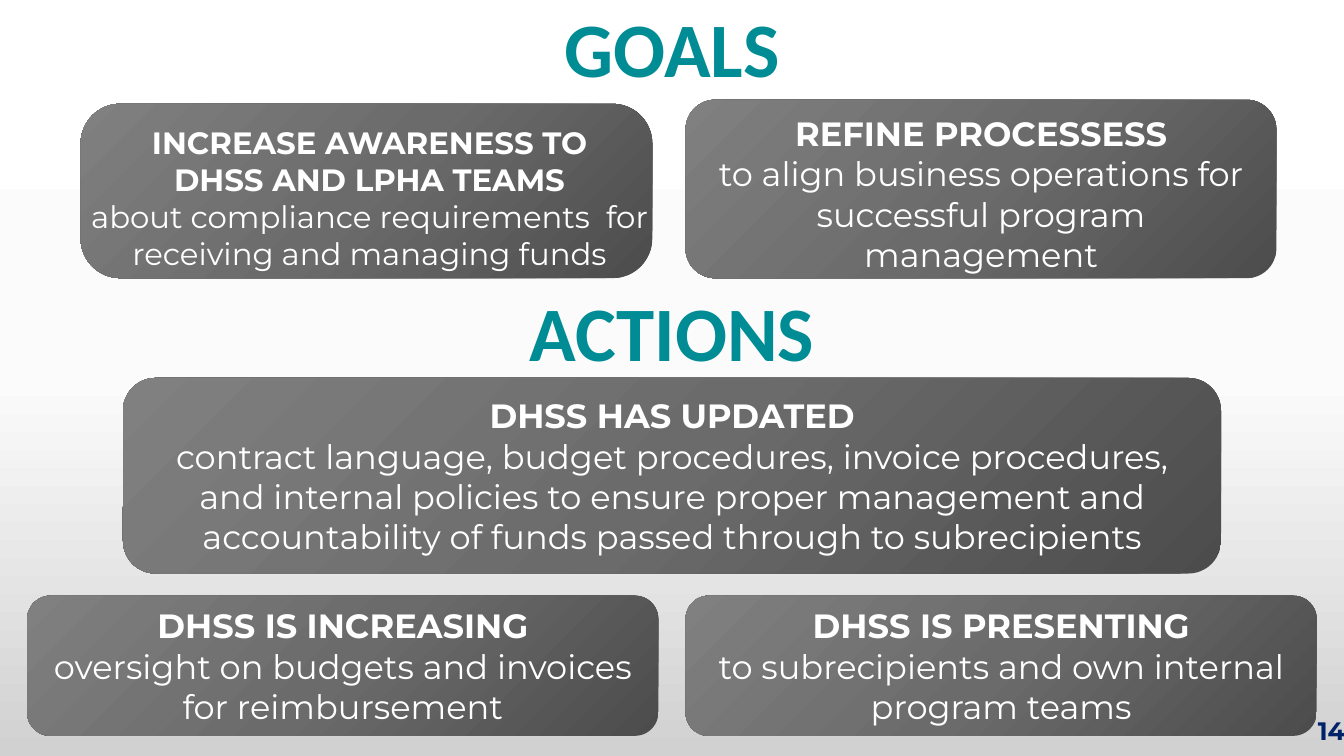
from copy import deepcopy
from dataclasses import dataclass

from pptx import Presentation
from pptx.dml.color import RGBColor
from pptx.dml.fill import FillFormat
from pptx.enum.shapes import MSO_SHAPE
from pptx.enum.text import MSO_ANCHOR, MSO_AUTO_SIZE, PP_ALIGN
from pptx.oxml.ns import qn
from pptx.oxml.xmlchemy import BaseOxmlElement
from pptx.shapes.autoshape import Shape
from pptx.slide import Slide
from pptx.text.text import TextFrame
from pptx.util import Inches, Pt

TEAL, NAVY, WHITE = "008C95", "012169", "FFFFFF"
CARD_COLORS = ["4C4C4C", "6B6B6B", "808080"]
PAGE_COLORS = ["FFFFFF", "FBFBFB", "D1D1D1"]
SLIDE_WIDTH, HEADING_HEIGHT = 13.33, 0.97


@dataclass
class Box:
    left: float
    top: float
    width: float
    height: float

    def lengths(self) -> list[int]:
        return [Inches(v) for v in (self.left, self.top, self.width, self.height)]


@dataclass
class Card:
    box: Box
    heading: list[str]
    body: str
    size: int = 24
    corner: float = 0.1667
    text_box: Box | None = None  # set when the text sits in its own box


CARDS = [
    Card(Box(0.8, 1.03, 5.67, 1.73),
         ["INCREASE AWARENESS TO", "DHSS AND LPHA TEAMS"],
         "about compliance requirements  for receiving and managing funds",
         size=22, corner=0.228, text_box=Box(0.8, 1.18, 5.73, 1.58)),
    Card(Box(6.8, 0.99, 5.86, 1.77), ["REFINE PROCESSESS"],
         "to align business operations for successful program management",
         text_box=Box(6.8, 1.07, 5.86, 1.72)),
    Card(Box(1.22, 3.75, 10.89, 1.94), ["DHSS HAS UPDATED"],
         "contract language, budget procedures, invoice procedures, and internal "
         "policies to ensure proper management and accountability of funds passed "
         "through to subrecipients"),
    Card(Box(0.27, 5.91, 6.26, 1.39), ["DHSS IS INCREASING"],
         "oversight on budgets and invoices for reimbursement"),
    Card(Box(6.8, 5.91, 6.26, 1.39), ["DHSS IS PRESENTING"],
         "to subrecipients and own internal program teams"),
]


def rgb(color: str) -> RGBColor:
    return RGBColor.from_string(color)


def set_gradient(fill: FillFormat, element: BaseOxmlElement,
                 colors: list[str], angle: float) -> None:
    """Spread colors evenly; element is the XML holding the fill."""
    fill.gradient()
    fill.gradient_angle = angle
    stops = element.find(".//" + qn("a:gsLst"))
    while len(stops) < len(colors):
        stops.append(deepcopy(stops[0]))
    for i, (stop, color) in enumerate(zip(fill.gradient_stops, colors)):
        stop.position = i / (len(colors) - 1)
        stop.color.rgb = rgb(color)


def write_lines(tf: TextFrame, lines: list[str], size: int, color: str,
                font: str = "Montserrat", bold_lines: int = 1) -> None:
    tf.word_wrap = True
    for i, line in enumerate(lines):
        p = tf.paragraphs[0] if i == 0 else tf.add_paragraph()
        p.text = line
        p.alignment = PP_ALIGN.CENTER
        p.font.name = font
        p.font.size = Pt(size)
        p.font.bold = i < bold_lines
        p.font.color.rgb = rgb(color)


def add_text_box(slide: Slide, box: Box) -> Shape:
    sp = slide.shapes.add_textbox(*box.lengths())
    sp.text_frame.auto_size = MSO_AUTO_SIZE.SHAPE_TO_FIT_TEXT
    return sp


def add_card(slide: Slide, card: Card) -> None:
    sp = slide.shapes.add_shape(MSO_SHAPE.ROUNDED_RECTANGLE, *card.box.lengths())
    sp.adjustments[0] = card.corner
    sp.shadow.inherit = False
    sp.line.fill.background()
    set_gradient(sp.fill, sp.element, CARD_COLORS, 135)
    if card.text_box:
        sp = add_text_box(slide, card.text_box)
    else:
        sp.text_frame.vertical_anchor = MSO_ANCHOR.MIDDLE
    write_lines(sp.text_frame, [*card.heading, card.body], card.size, WHITE,
                bold_lines=len(card.heading))


def format_heading(sp: Shape, text: str, top: float) -> None:
    box = Box(0, top, SLIDE_WIDTH, HEADING_HEIGHT)
    sp.left, sp.top, sp.width, sp.height = box.lengths()
    tf = sp.text_frame
    tf.auto_size = MSO_AUTO_SIZE.NONE
    tf.vertical_anchor = MSO_ANCHOR.MIDDLE
    write_lines(tf, [text], 55, TEAL, font="Calibri")
    tf.paragraphs[0].line_spacing = 0.9


def main() -> None:
    prs = Presentation()
    prs.slide_width, prs.slide_height = Inches(SLIDE_WIDTH), Inches(7.5)
    slide = prs.slides.add_slide(prs.slide_layouts[5])
    set_gradient(slide.background.fill, slide.element, PAGE_COLORS, 270)

    format_heading(slide.shapes.title, "GOALS", 0.04)
    actions_top = 2.85
    actions = add_text_box(slide, Box(0, actions_top, SLIDE_WIDTH, HEADING_HEIGHT))
    format_heading(actions, "ACTIONS", actions_top)
    for card in CARDS:
        add_card(slide, card)
    page_number = add_text_box(slide, Box(12.9, 7.05, 0.61, 0.4))
    write_lines(page_number.text_frame, ["14"], 18, NAVY)

    prs.save("out.pptx")


if __name__ == "__main__":
    main()
